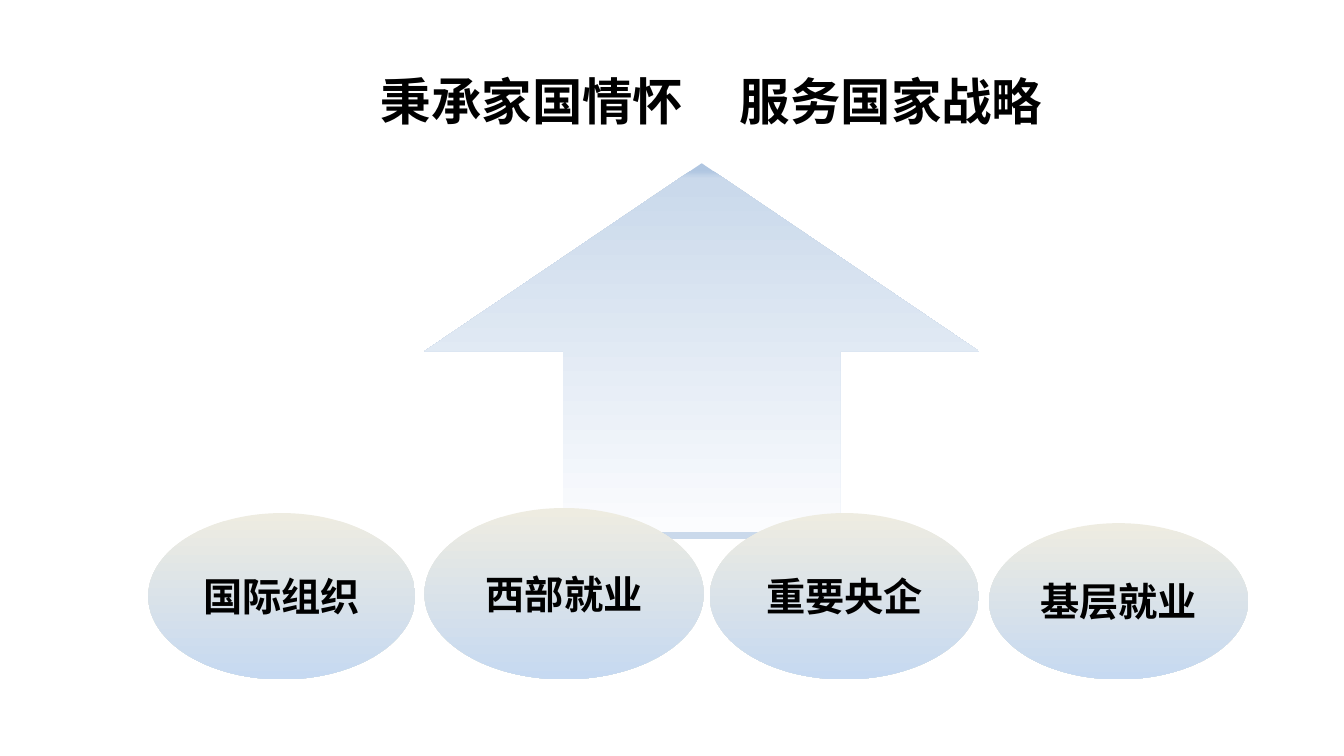
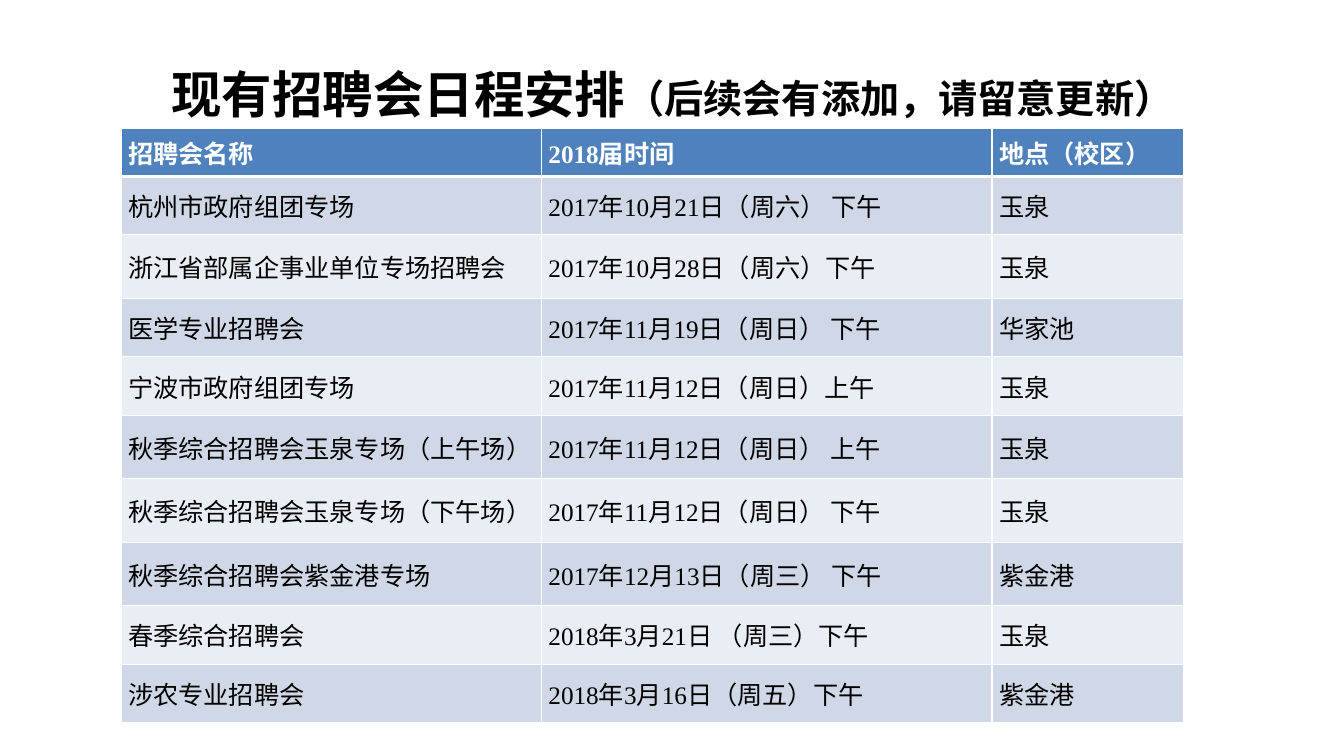
from dataclasses import dataclass

from lxml.etree import SubElement as Sub
from pptx import Presentation
from pptx.dml.color import RGBColor as Rgb
from pptx.enum.shapes import MSO_SHAPE as Kind
from pptx.enum.text import MSO_ANCHOR as Anchor, PP_ALIGN as Align
from pptx.oxml import parse_xml
from pptx.oxml.ns import nsdecls, qn
from pptx.util import Emu, Pt

PX = 9144  # 100 px to the inch
HEX = {
    "text": "000000", "white": "FFFFFF",
    "sand": "EEECE1", "sky": "C6D9F1",
    "tip": "B0C6E1", "mist": "CAD9EB", "haze": "FBFCFE",
    "head": "4F81BD", "odd": "D0D8E8", "even": "E9EDF4",
}
SANS = "Noto Sans CJK SC"
TITLE = "Calibri"
SERIF = "Times New Roman"
ARROW = [(0, "tip"), (2, "tip"), (4, "mist"), (5, "mist"),
         (98, "haze"), (98, "mist"), (100, "mist")]
OVAL = [(0, "sand"), (100, "sky")]


@dataclass(frozen=True)
class Box:
    x: int
    y: int
    w: int
    h: int

    def emu(self) -> tuple:
        return tuple(px(n) for n in (self.x, self.y, self.w, self.h))


@dataclass(frozen=True)
class Goal:
    text: str
    box: Box


@dataclass(frozen=True)
class Fair:
    name: str
    time: str
    place: str
    high: int

    def cells(self) -> tuple:
        return self.name, self.time, self.place


GOALS = [
    Goal("国际组织", Box(147, 509, 265, 165)),
    Goal("基层就业", Box(981, 519, 257, 155)),
    Goal("重要央企", Box(704, 509, 267, 165)),
    Goal("西部就业", Box(421, 504, 277, 170)),
]
WIDTHS = [417, 447, 190]
FAIRS = [
    Fair("招聘会名称", "2018届时间", "地点（校区）", 48),
    Fair("杭州市政府组团专场", "2017年10月21日（周六） 下午", "玉泉", 58),
    Fair("浙江省部属企事业单位专场招聘会", "2017年10月28日（周六）下午", "玉泉", 63),
    Fair("医学专业招聘会", "2017年11月19日（周日） 下午", "华家池", 58),
    Fair("宁波市政府组团专场", "2017年11月12日（周日）上午", "玉泉", 58),
    Fair("秋季综合招聘会玉泉专场（上午场）", "2017年11月12日（周日） 上午", "玉泉", 63),
    Fair("秋季综合招聘会玉泉专场（下午场）", "2017年11月12日（周日） 下午", "玉泉", 63),
    Fair("秋季综合招聘会紫金港专场", "2017年12月13日（周三） 下午", "紫金港", 63),
    Fair("春季综合招聘会", "2018年3月21日 （周三）下午", "玉泉", 58),
    Fair("涉农专业招聘会", "2018年3月16日（周五）下午", "紫金港", 58),
]


def px(n: int) -> Emu:
    return Emu(n * PX)


def rgb(key: str) -> Rgb:
    return Rgb.from_string(HEX[key])


def style(para, face: str, bold: bool, key: str = "text") -> None:
    """Set the Latin and East Asian faces, weight and colour."""
    font = para.font
    font.name, font.bold = face, bold
    font.color.rgb = rgb(key)
    base = para._p.pPr.find(qn("a:defRPr"))
    Sub(base, qn("a:ea"), typeface=SANS)


def title(slide, box: Box, runs: list, align: Align, tab: int = 0) -> None:
    frame = slide.shapes.add_textbox(*box.emu()).text_frame
    frame.word_wrap = True
    frame.vertical_anchor = Anchor.MIDDLE
    para = frame.paragraphs[0]
    para.alignment = align
    if tab:
        tabs = Sub(para._p.get_or_add_pPr(), qn("a:tabLst"))
        Sub(tabs, qn("a:tab"), pos=str(px(tab)), algn="l")
    style(para, TITLE, True)
    for text, size in runs:
        run = para.add_run()
        run.text = text
        run.font.size = Pt(size)


def shade(slide, kind: Kind, box: Box, stops: list):
    """Add a shape whose colours run from top to bottom."""
    shape = slide.shapes.add_shape(kind, *box.emu())
    shape.shadow.inherit = False
    shape.line.fill.background()
    shape.fill.gradient()
    shape.fill.gradient_angle = 270
    ramp = shape.element.spPr.find(qn("a:gradFill")).find(qn("a:gsLst"))
    for old in list(ramp):
        ramp.remove(old)
    for pos, key in stops:
        stop = Sub(ramp, qn("a:gs"), pos=str(pos * 1000))
        Sub(stop, qn("a:srgbClr"), val=HEX[key])
    return shape


def oval(slide, goal: Goal) -> None:
    frame = shade(slide, Kind.OVAL, goal.box, OVAL).text_frame
    frame.word_wrap = True
    frame.vertical_anchor = Anchor.MIDDLE
    para = frame.paragraphs[0]
    para.text = goal.text
    para.alignment = Align.CENTER
    para.font.size = Pt(28)
    style(para, SANS, True)


def edge(cell, row: int) -> None:
    """Draw white borders, thick between the head and the body."""
    wide = {"L": 1, "R": 1, "T": 3 if row == 1 else 1, "B": 3 if row == 0 else 1}
    prop = cell._tc.get_or_add_tcPr()
    for i, (side, size) in enumerate(wide.items()):
        prop.insert(i, parse_xml(
            f'<a:ln{side} {nsdecls("a")} w="{Pt(size)}"><a:solidFill>'
            f'<a:srgbClr val="{HEX["white"]}"/></a:solidFill></a:ln{side}>'))


def fill(cell, text: str, row: int) -> None:
    head = row == 0
    cell.fill.solid()
    cell.fill.fore_color.rgb = rgb("head" if head else "odd" if row % 2 else "even")
    cell.vertical_anchor = Anchor.MIDDLE
    cell.margin_left = cell.margin_right = px(7)
    cell.margin_top = cell.margin_bottom = 0
    para = cell.text_frame.paragraphs[0]
    para.text = text
    para.font.size = Pt(18)
    style(para, SERIF, head, "white" if head else "text")
    edge(cell, row)


def table(slide) -> None:
    box = Box(120, 127, sum(WIDTHS), sum(f.high for f in FAIRS))
    grid = slide.shapes.add_table(len(FAIRS), len(WIDTHS), *box.emu()).table
    grid.horz_banding = False
    for col, wide in zip(grid.columns, WIDTHS):
        col.width = px(wide)
    for r, fair in enumerate(FAIRS):
        grid.rows[r].height = px(fair.high)
        for c, text in enumerate(fair.cells()):
            fill(grid.cell(r, c), text, r)


def goals(slide) -> None:
    title(slide, Box(368, 37, 900, 125), [("秉承家国情怀\t服务国家战略", 36)],
          Align.LEFT, tab=356)
    shade(slide, Kind.UP_ARROW, Box(421, 162, 550, 373), ARROW)
    for goal in GOALS:
        oval(slide, goal)


def fairs(slide) -> None:
    title(slide, Box(67, 30, 1200, 125),
          [("现有招聘会日程安排", 36), ("（后续会有添加，请留意更新）", 28)],
          Align.CENTER)
    table(slide)


def main() -> None:
    deck = Presentation()
    deck.slide_width, deck.slide_height = px(1333), px(750)
    for draw in (goals, fairs):
        draw(deck.slides.add_slide(deck.slide_layouts[6]))
    deck.save("out.pptx")


if __name__ == "__main__":
    main()
